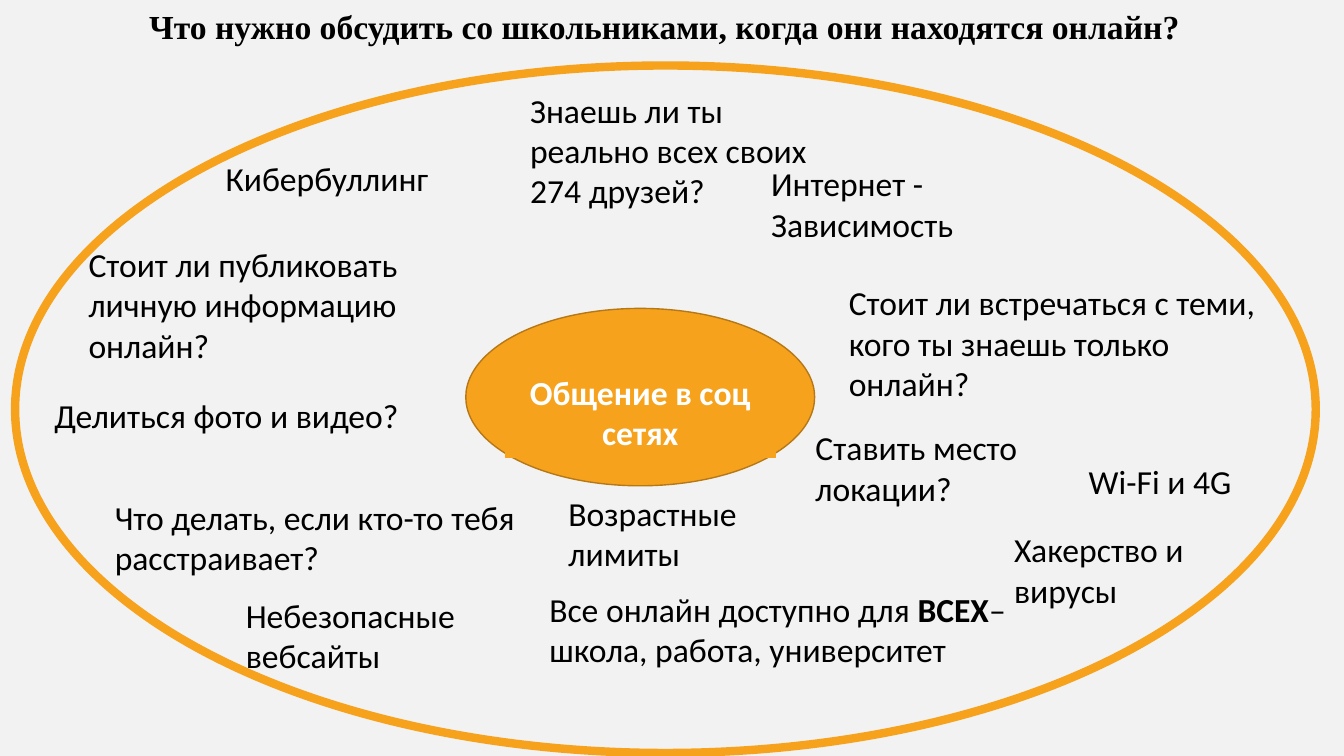
import pptx
import pptx.util
from pptx.dml.color import RGBColor
from pptx.enum.shapes import MSO_SHAPE
from pptx.enum.text import MSO_ANCHOR, MSO_AUTO_SIZE, PP_ALIGN

PX = 9144  # EMU in one px, at 100 px to the inch

ORANGE = RGBColor(0xF6, 0xA2, 0x1D)
DARK_ORANGE = RGBColor(0xB6, 0x78, 0x15)
PALE_GREY = RGBColor(0xF2, 0xF2, 0xF2)
BLACK = RGBColor(0, 0, 0)
WHITE = RGBColor(0xFF, 0xFF, 0xFF)

LABEL_FONT = {"name": "Calibri", "size": pptx.util.Pt(24), "bold": False}
TOPIC_FONT = {**LABEL_FONT, "bold": True}
TITLE_FONT = {**TOPIC_FONT, "name": "Times New Roman"}
FRAME_FORMAT = {
    "word_wrap": True,
    "auto_size": MSO_AUTO_SIZE.SHAPE_TO_FIT_TEXT,
    "margin_left": 10 * PX,
    "margin_right": 10 * PX,
    "margin_top": 5 * PX,
    "margin_bottom": 5 * PX,
}

TITLE = "Что нужно обсудить со школьниками, когда они находятся онлайн? "
# Each question: its box (left, top, width, height) and its (text, bold) spans
QUESTIONS = [
    ((832, 275, 433, 131), [("Стоит ли встречаться с теми, кого ты знаешь только онлайн?", False)]),
    ((104, 488, 450, 91), [("Что делать, если кто-то тебя расстраивает?", False)]),
    ((516, 84, 310, 131), [("Знаешь ли ты реально всех своих 274 друзей?", False)]),
    ((554, 484, 260, 91), [("Возрастные лимиты", False)]),
    ((44, 387, 420, 50), [("Делиться фото и видео?", False)]),
    ((535, 579, 527, 91), [("Все онлайн доступно для ", False), ("ВСЕХ", True),
                           ("– школа, работа, университет", False)]),
    ((78, 237, 400, 131), [("Стоит ли публиковать личную информацию онлайн?", False)]),
    ((799, 419, 260, 131), [("Ставить место локации?", False)]),
    ((996, 520, 293, 91), [("Хакерство и вирусы", False)]),
    ((234, 585, 293, 91), [("Небезопасные вебсайты", False)]),
    ((214, 152, 293, 50), [("Кибербуллинг", False)]),
    ((755, 157, 310, 91), [("Интернет - Зависимость", False)]),
    ((1070, 452, 244, 50), [("Wi-Fi и 4G", False)]),
]


def to_emu(box):
    return [length * PX for length in box]


def set_all(target, values):
    for name, value in values.items():
        setattr(target, name, value)


def write(shape, spans, font, color, align, anchor=MSO_ANCHOR.TOP):
    """Fill the shape with one paragraph of (text, bold) spans."""
    frame = shape.text_frame
    set_all(frame, {**FRAME_FORMAT, "vertical_anchor": anchor})
    para = frame.paragraphs[0]
    para.alignment = align
    for text, bold in spans:
        span = para.add_run()
        span.text = text
        set_all(span.font, {**font, "bold": bold})
        span.font.color.rgb = color


def add_figure(page, kind, box, fill, line, width):
    figure = page.shapes.add_shape(kind, *to_emu(box))
    figure.shadow.inherit = False
    if fill is None:
        figure.fill.background()
    else:
        figure.fill.solid()
        figure.fill.fore_color.rgb = fill
    figure.line.color.rgb = line
    figure.line.width = pptx.util.Pt(width)
    return figure


def place_title(page, box):
    title = page.shapes.title
    set_all(title, dict(zip(("left", "top", "width", "height"), to_emu(box))))
    write(title, [(TITLE, True)], TITLE_FONT, BLACK, PP_ALIGN.CENTER)


def add_topic(page, box):
    """Draw the central oval with its caption."""
    left, top, width, height = box
    add_figure(page, MSO_SHAPE.OVAL, box, ORANGE, DARK_ORANGE, 1)
    caption_box = (left + 39, top + 57, width - 78, 91)
    caption = add_figure(page, MSO_SHAPE.RECTANGLE, caption_box, ORANGE, ORANGE, 0.75)
    write(caption, [("Общение в соц сетях", True)], TOPIC_FONT, WHITE,
          PP_ALIGN.CENTER, MSO_ANCHOR.MIDDLE)


def add_questions(page):
    for box, spans in QUESTIONS:
        label = page.shapes.add_textbox(*to_emu(box))
        write(label, spans, LABEL_FONT, BLACK, PP_ALIGN.LEFT)


def main():
    deck = pptx.Presentation()
    set_all(deck, {"slide_width": 1333 * PX, "slide_height": 750 * PX})
    page = deck.slides.add_slide(deck.slide_layouts.get_by_name("Title Only"))
    page.background.fill.solid()
    page.background.fill.fore_color.rgb = PALE_GREY
    place_title(page, (104, 1, 1118, 50))
    add_figure(page, MSO_SHAPE.OVAL, (15, 65, 1290, 682), None, ORANGE, 6)
    add_topic(page, (462, 306, 346, 176))
    add_questions(page)
    deck.save("out.pptx")


if __name__ == "__main__":
    main()
